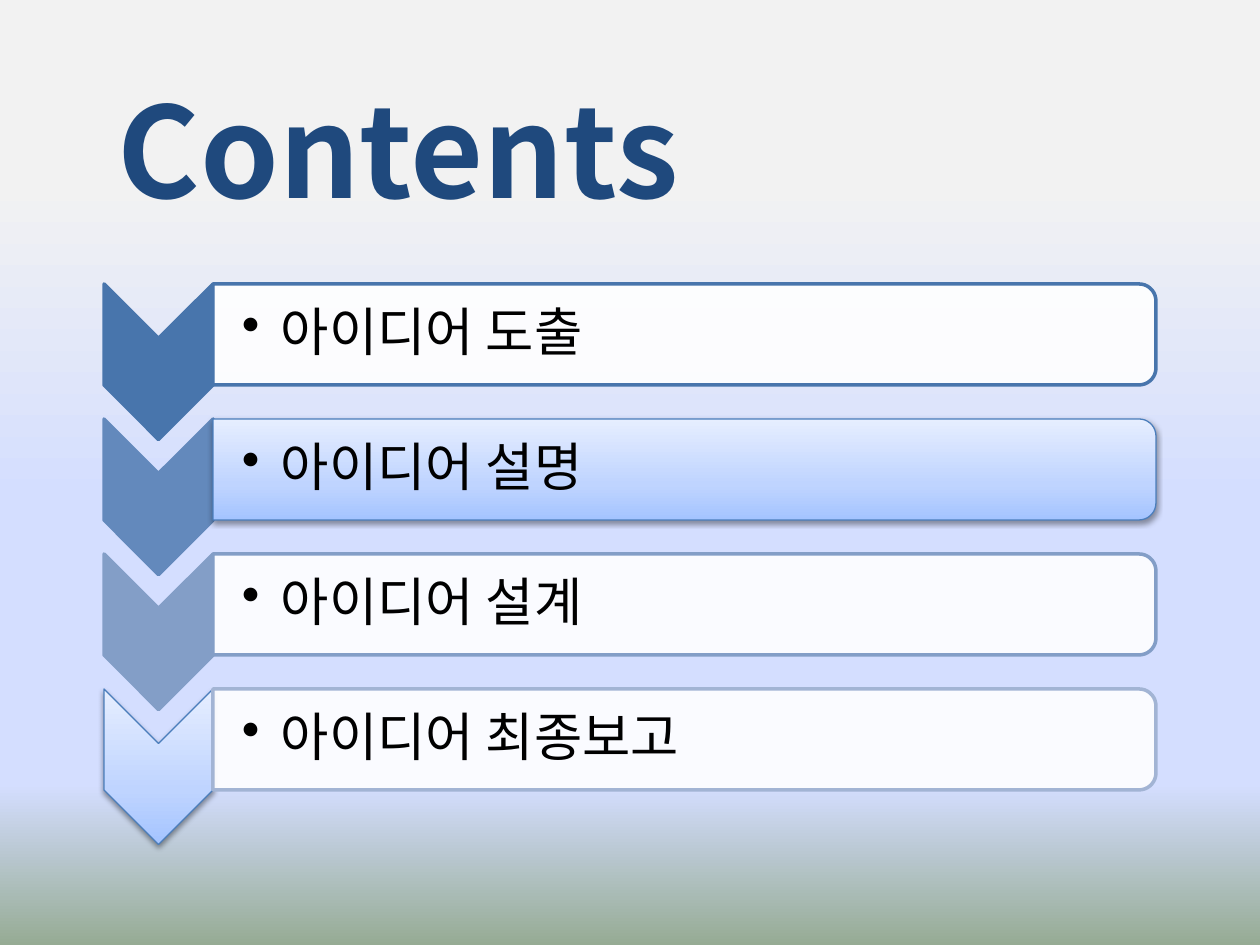
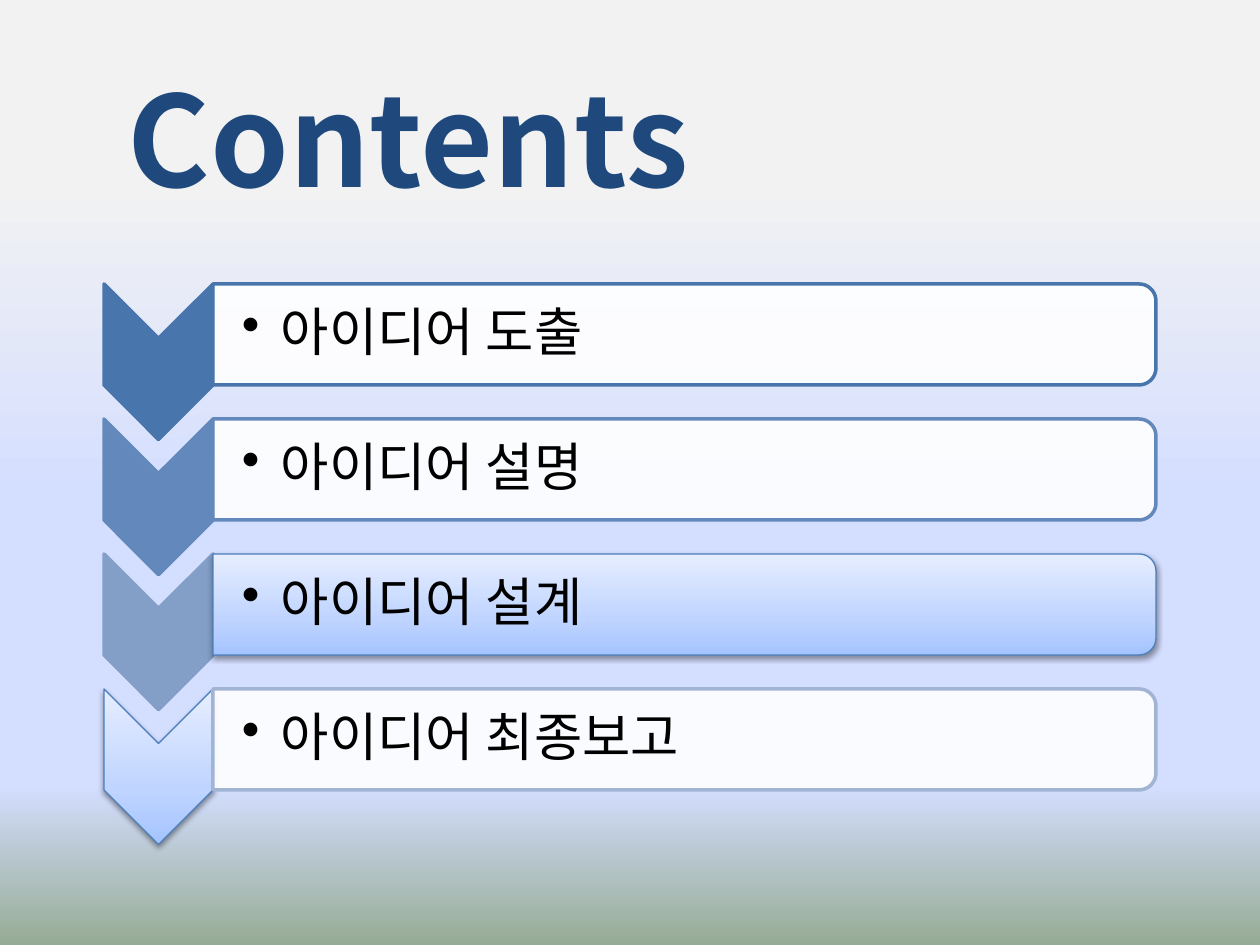
from math import cos, radians, sin

from lxml.etree import SubElement
from pptx import Presentation
from pptx.dml.color import RGBColor
from pptx.enum.text import MSO_ANCHOR, MSO_AUTO_SIZE, PP_ALIGN
from pptx.oxml.ns import qn
from pptx.util import Pt

PX = 914400 / 126
FONT = "Noto Sans CJK KR"
COLORS = {
    "title": "1F497D",
    "text": "000000",
    "bar": "FFFFFF",
    "shadow": "000000",
    "accent_line": "4B7EBC",
}
STEP_COLORS = ["4875AC", "6389BC", "839EC7", "A2B4D4"]
BACKGROUND_STOPS = [(19, "F2F2F2"), (53, "D4DEFF"), (83, "D4DEFF"), (100, "96AB94")]
ACCENT_STOPS = [(0, "A4C4FF"), (35, "BFD4FF"), (100, "E6EEFF")]
STEPS = ["아이디어 도출", "아이디어 설명", "아이디어 설계", "아이디어 최종보고"]
STEPS_BOX = (104, 284, 1052, 506)
STEP_PITCH = 135
CHEVRON_WIDTH = 109
BAR_HEIGHT = 101
CORNER = 17
TITLE_SIZE = (912, 251)
SLIDES = [
    {"title_at": (105, 66), "current": 1},
    {"title_at": (115, 55), "current": 2},
]


def emu(px):
    """Turn px into EMU."""
    return round(px * PX)


def set_gradient(fill, owner, stops, angle):
    """Give a fill the listed stops at a counterclockwise angle."""
    fill.gradient()
    fill.gradient_angle = angle
    stop_list = next(owner.iter(qn("a:gsLst")))
    for old_stop in list(stop_list):
        stop_list.remove(old_stop)
    for percent, color in stops:
        stop = SubElement(stop_list, qn("a:gs"), pos=str(percent * 1000))
        SubElement(stop, qn("a:srgbClr"), val=color)


def add_outline(slide, points):
    """Add a closed outline through points given in px, without shadow."""
    corners = [(emu(x), emu(y)) for x, y in points]
    builder = slide.shapes.build_freeform(*corners[0], scale=1.0)
    builder.add_line_segments(corners[1:], close=True)
    outline = builder.convert_to_shape()
    outline.shadow.inherit = False
    return outline


def paint_solid(outline, fill, line, opacity=100):
    """Fill an outline with one colour and draw its edge."""
    outline.fill.solid()
    outline.fill.fore_color.rgb = RGBColor.from_string(fill)
    if opacity < 100:
        color = next(outline._element.spPr.iter(qn("a:srgbClr")))
        SubElement(color, qn("a:alpha"), val=str(opacity * 1000))
    outline.line.color.rgb = RGBColor.from_string(line)
    outline.line.width = Pt(2)


def paint_accent(outline):
    """Give an outline the highlighted gradient, thin edge and shadow."""
    properties = outline._element.spPr
    set_gradient(outline.fill, properties, ACCENT_STOPS, 90)
    outline.line.color.rgb = RGBColor.from_string(COLORS["accent_line"])
    outline.line.width = Pt(0.75)
    shadow = SubElement(
        properties.find(qn("a:effectLst")), qn("a:outerShdw"),
        blurRad="40000", dist="20000", dir="5400000", rotWithShape="0",
    )
    color = SubElement(shadow, qn("a:srgbClr"), val=COLORS["shadow"])
    SubElement(color, qn("a:alpha"), val="38000")


def write_text(frame, text, *, size, color, bold=False, anchor=MSO_ANCHOR.TOP,
               spacing=None, insets=None, bullet_indent=0):
    """Write one left-aligned paragraph in a text frame."""
    frame.word_wrap = True
    frame.vertical_anchor = anchor
    if insets:
        (frame.margin_left, frame.margin_top,
         frame.margin_right, frame.margin_bottom) = map(emu, insets)
    paragraph = frame.paragraphs[0]
    paragraph.alignment = PP_ALIGN.LEFT
    if spacing:
        paragraph.line_spacing = spacing
    if bullet_indent:
        properties = paragraph._p.get_or_add_pPr()
        properties.set("marL", str(emu(bullet_indent)))
        properties.set("indent", str(-emu(bullet_indent)))
        SubElement(properties, qn("a:buChar"), char="•")
    run = paragraph.add_run()
    run.text = text
    run.font.size = Pt(size)
    run.font.bold = bold
    run.font.name = FONT
    run.font.color.rgb = RGBColor.from_string(color)
    SubElement(run._r.get_or_add_rPr(), qn("a:ea"), typeface=FONT)


def add_chevron(slide, left, top):
    """Add the downward chevron of one step."""
    middle, right = left + CHEVRON_WIDTH / 2, left + CHEVRON_WIDTH
    notch, side = CHEVRON_WIDTH / 2, top + BAR_HEIGHT
    return add_outline(slide, [
        (right, top), (right, side), (middle, side + notch),
        (left, side), (left, top), (middle, top + notch),
    ])


def add_bar(slide, left, top, width):
    """Add the bar of one step, rounded at its right corners."""
    right, bottom = left + width - CORNER, top + BAR_HEIGHT
    arcs = [
        (right + CORNER * cos(radians(angle)), center + CORNER * sin(radians(angle)))
        for center, start in ((top + CORNER, -90), (bottom - CORNER, 0))
        for angle in range(start, start + 91, 10)
    ]
    return add_outline(slide, [(left, top), *arcs, (left, bottom)])


def add_steps(slide, box, current):
    """Place all steps in a box, with the current one at the back."""
    left, top, width, _ = box
    last = len(STEPS) - 1
    for index in sorted(range(len(STEPS)), key=lambda step: step != current):
        color = STEP_COLORS[index]
        step_top = top + index * STEP_PITCH
        chevron = add_chevron(slide, left, step_top)
        if index == last:
            paint_accent(chevron)
        else:
            paint_solid(chevron, color, color)
        bar = add_bar(slide, left + CHEVRON_WIDTH, step_top, width - CHEVRON_WIDTH)
        if index == current:
            paint_accent(bar)
        else:
            paint_solid(bar, COLORS["bar"], color, opacity=90)
        write_text(bar.text_frame, STEPS[index], size=30, color=COLORS["text"],
                   anchor=MSO_ANCHOR.MIDDLE, spacing=0.9, insets=(29, 8, 8, 8),
                   bullet_indent=39)


def add_title(slide, left, top):
    """Place and format the title placeholder."""
    title = slide.shapes.title
    title.left, title.top = emu(left), emu(top)
    title.width, title.height = map(emu, TITLE_SIZE)
    write_text(title.text_frame, "Contents", size=72, color=COLORS["title"], bold=True)
    title.text_frame.auto_size = MSO_AUTO_SIZE.SHAPE_TO_FIT_TEXT


def add_contents_slide(presentation, title_at, current):
    """Add a contents slide that highlights the current step."""
    slide = presentation.slides.add_slide(presentation.slide_layouts[5])
    add_title(slide, *title_at)
    add_steps(slide, STEPS_BOX, current)


def main():
    """Build and save the presentation."""
    presentation = Presentation()
    presentation.slide_width, presentation.slide_height = emu(1260), emu(945)
    master = presentation.slide_master
    set_gradient(master.background.fill, master._element, BACKGROUND_STOPS, 270)
    for contents in SLIDES:
        add_contents_slide(presentation, **contents)
    presentation.save("out.pptx")


if __name__ == "__main__":
    main()
